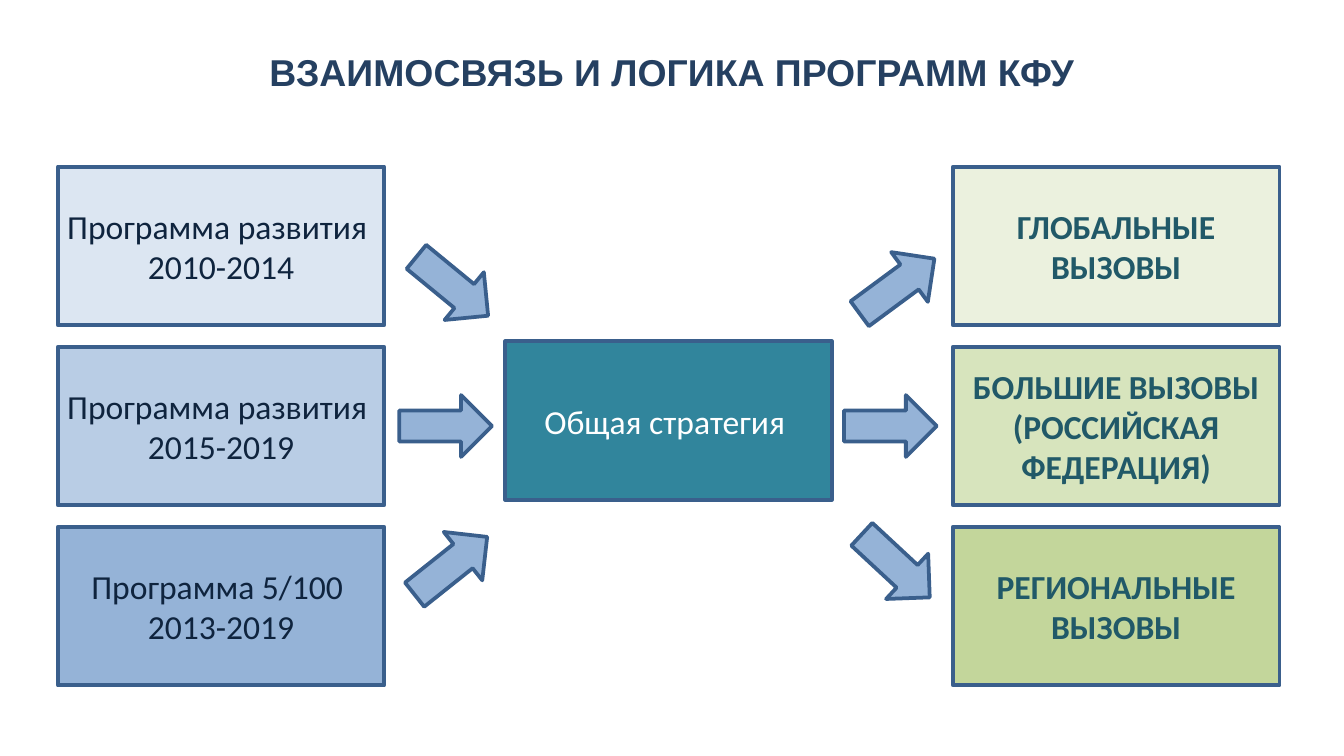
from pptx import Presentation
from pptx import util as u
from pptx.dml.color import RGBColor
from pptx.enum import shapes, text

THEME = {
    "outline": "3A5F8C", "arrow": "95B3D7", "line_width": 2,
    "title": {"size": 20, "name": "Arial", "color": "254061", "bold": True},
    "program": {"size": 18, "name": "Calibri", "color": "0F243E", "bold": False},
    "strategy": {"size": 18, "name": "Calibri", "color": "FFFFFF", "bold": False},
    "challenge": {"size": 18, "name": "Calibri", "color": "215968", "bold": True},
}

TITLE = "ВЗАИМОСВЯЗЬ И ЛОГИКА ПРОГРАММ КФУ"
BOXES = [
    (0, 0, "program", "DCE6F2", ["Программа развития ", "2010-2014"]),
    (0, 1, "program", "B9CDE5", ["Программа развития ", "2015-2019"]),
    (0, 2, "program", "95B3D7", ["Программа 5/100 ", "2013-2019"]),
    (1, 0.97, "strategy", "31859C", ["Общая стратегия "]),
    (2, 0, "challenge", "EBF1DE", ["ГЛОБАЛЬНЫЕ ВЫЗОВЫ"]),
    (2, 1, "challenge", "D7E4BD", ["БОЛЬШИЕ ВЫЗОВЫ (РОССИЙСКАЯ ФЕДЕРАЦИЯ)"]),
    (2, 2, "challenge", "C3D69B", ["РЕГИОНАЛЬНЫЕ ВЫЗОВЫ"]),
]
ARROW_ANGLES = [(39.4, 0, 321.5), (323.6, 0, 42.9)]
ARROW_SHIFTS = (0.05, 0, 0.04)

BOX_GRID = {"left": 0.43, "top": 1.24, "column": 3.33, "row": 1.34,
            "width": 2.43, "height": 1.18}
ARROW_GRID = {"left": 2.97, "top": 1.9, "column": 3.31, "row": 1.04,
              "width": 0.69, "height": 0.46}


def place(grid, column, row, shift=0):
    lengths = (grid["left"] + column * grid["column"] + shift,
               grid["top"] + row * grid["row"], grid["width"], grid["height"])
    return [u.Inches(length) for length in lengths]


def write(shape, lines, style, margins):
    frame = shape.text_frame
    horizontal, vertical = map(u.Inches, margins)
    settings = {"word_wrap": True, "vertical_anchor": text.MSO_ANCHOR.MIDDLE,
                "margin_left": horizontal, "margin_right": horizontal,
                "margin_top": vertical, "margin_bottom": vertical}
    for name, value in settings.items():
        setattr(frame, name, value)
    frame.text = "\n".join(lines)
    look = THEME[style]
    for paragraph in frame.paragraphs:
        paragraph.alignment = text.PP_ALIGN.CENTER
        font = paragraph.runs[0].font
        for name, value in {"size": u.Pt(look["size"]), "name": look["name"],
                            "bold": look["bold"]}.items():
            setattr(font, name, value)
        font.color.rgb = RGBColor.from_string(look["color"])


def draw(slide, kind, position, fill):
    shape = slide.shapes.add_shape(kind, *position)
    shape.shadow.inherit = False
    shape.fill.solid()
    shape.fill.fore_color.rgb = RGBColor.from_string(fill)
    shape.line.color.rgb = RGBColor.from_string(THEME["outline"])
    shape.line.width = u.Pt(THEME["line_width"])
    return shape


def main():
    presentation = Presentation()
    presentation.slide_width = u.Inches(10)
    presentation.slide_height = presentation.slide_width * 9 // 16
    slide = presentation.slides.add_slide(presentation.slide_layouts[6])

    title = slide.shapes.add_textbox(*map(u.Inches, (0.5, 0.06, 9, 0.94)))
    write(title, [TITLE], "title", (0.1, 0.05))

    for column, row, style, fill, lines in BOXES:
        box = draw(slide, shapes.MSO_SHAPE.RECTANGLE, place(BOX_GRID, column, row), fill)
        write(box, lines, style, (0.07, 0.04))

    for column, angles in enumerate(ARROW_ANGLES):
        for row, (angle, shift) in enumerate(zip(angles, ARROW_SHIFTS)):
            arrow = draw(slide, shapes.MSO_SHAPE.RIGHT_ARROW,
                         place(ARROW_GRID, column, row, shift), THEME["arrow"])
            arrow.rotation = angle

    presentation.save("out.pptx")


if __name__ == "__main__":
    main()
